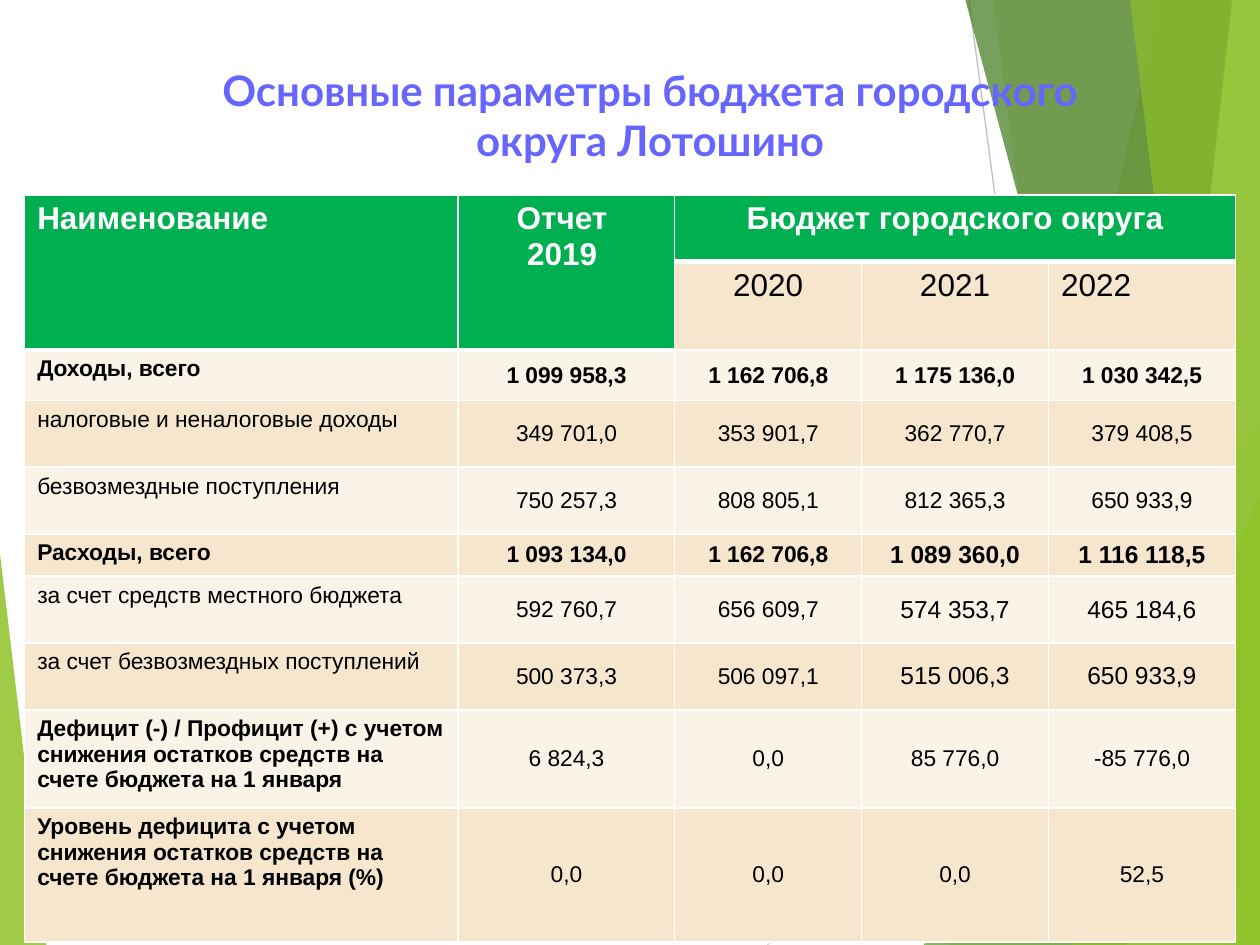
from dataclasses import dataclass

from lxml import etree
from pptx import Presentation
from pptx.dml.color import RGBColor
from pptx.enum.shapes import MSO_CONNECTOR, MSO_SHAPE
from pptx.enum.text import MSO_ANCHOR, PP_ALIGN
from pptx.oxml.ns import qn
from pptx.util import Pt

LEFT, CENTER = PP_ALIGN.LEFT, PP_ALIGN.CENTER
TOP, MIDDLE = MSO_ANCHOR.TOP, MSO_ANCHOR.MIDDLE
TRIANGLE, STRAIGHT = MSO_SHAPE.ISOSCELES_TRIANGLE, MSO_CONNECTOR.STRAIGHT

WHITE = RGBColor(0xFF, 0xFF, 0xFF)
BLACK = RGBColor(0x00, 0x00, 0x00)
GREY = RGBColor(0xBF, 0xBF, 0xBF)
PALE_GREY = RGBColor(0xD9, 0xD9, 0xD9)
LEAF = RGBColor(0x90, 0xC2, 0x26)
GRASS = RGBColor(0x54, 0xA0, 0x21)
FOREST = RGBColor(0x3F, 0x78, 0x19)
LIME = RGBColor(0xC0, 0xE4, 0x74)
VIOLET = RGBColor(0x66, 0x66, 0xFF)
HEADER_GREEN = RGBColor(0x00, 0xB0, 0x50)
SAND = RGBColor(0xF5, 0xE6, 0xCD)
CREAM = RGBColor(0xFA, 0xF3, 0xE8)

SLIDE_W, SLIDE_H = 720, 540


@dataclass(frozen=True)
class Ray:
    x1: float
    y1: float
    x2: float
    y2: float
    color: RGBColor


@dataclass(frozen=True)
class Band:
    """Full-height strip reaching the right edge, with a slanted left side."""
    top_x: float
    bottom_x: float
    color: RGBColor
    opacity: int


@dataclass(frozen=True)
class Wedge:
    """Triangle standing on the slide's bottom edge."""
    left: float
    top: float
    width: float
    apex: float
    color: RGBColor
    opacity: int


@dataclass(frozen=True)
class BudgetRow:
    name: str
    values: tuple[str, ...]
    height: float
    bold_name: bool = False
    bold_values: bool = False
    late_size: float = 13  # text size of the last two years


DECORATION = (
    Ray(553.7, 0, 625.7, 540, GREY),
    Ray(720, 290.2, 438.5, 540, PALE_GREY),
    Band(663.1, 542.2, LEAF, 30),
    Band(567.4, 638.6, LEAF, 20),
    Wedge(527.8, 239.8, 192.2, 1, GRASS, 72),
    Band(551.5, 697, FOREST, 70),
    Band(704.2, 643.7, LIME, 70),
    Band(645.8, 711.4, LEAF, 65),
    Wedge(612.7, 283, 107.3, 1, LEAF, 80),
    Wedge(0, 316.1, 26.6, 0, LEAF, 85),
)

COLUMN_WIDTHS = (247.7, 123.8, 106.8, 106.8, 106.8)
HEADER_HEIGHTS = (38.2, 47.8)
YEARS = (("2020", CENTER), ("2021", CENTER), ("2022", LEFT))
BUDGET = (
    BudgetRow("Доходы, всего", ("1 099 958,3", "1 162 706,8", "1 175 136,0", "1 030 342,5"),
              28.8, True, True),
    BudgetRow("налоговые и неналоговые доходы",
              ("349 701,0", "353 901,7", "362 770,7", "379 408,5"), 38.2),
    BudgetRow("безвозмездные поступления",
              ("750 257,3", "808 805,1", "812 365,3", "650 933,9"), 38.2),
    BudgetRow("Расходы, всего", ("1 093 134,0", "1 162 706,8", "1 089 360,0", "1 116 118,5"),
              24, True, True, 14),
    BudgetRow("за счет средств местного бюджета",
              ("592 760,7", "656 609,7", "574 353,7", "465 184,6"), 38.2, late_size=14),
    BudgetRow("за счет безвозмездных поступлений",
              ("500 373,3", "506 097,1", "515 006,3", "650 933,9"), 38.2, late_size=14),
    BudgetRow("Дефицит (-) / Профицит (+) с учетом снижения остатков средств на счете "
              "бюджета на 1 января", ("6 824,3", "0,0", "85 776,0", "-85 776,0"), 56.2, True),
    BudgetRow("Уровень дефицита с учетом снижения остатков средств на счете "
              "бюджета на 1 января (%)", ("0,0", "0,0", "0,0", "52,5"), 76.6, True),
)


def paint(shape, color: RGBColor, opacity: int) -> None:
    shape.shadow.inherit = False
    shape.line.fill.background()
    shape.fill.solid()
    shape.fill.fore_color.rgb = color
    tone = shape.fill._xPr.find(qn("a:solidFill"))[0]
    etree.SubElement(tone, qn("a:alpha"), val=str(opacity * 1000))


def draw_ray(slide, ray: Ray) -> None:
    line = slide.shapes.add_connector(STRAIGHT, Pt(ray.x1), Pt(ray.y1), Pt(ray.x2), Pt(ray.y2))
    line.line.color.rgb = ray.color
    line.line.width = Pt(0.75)
    etree.SubElement(line._element.spPr, qn("a:effectLst"))


def draw_band(slide, band: Band) -> None:
    outline = slide.shapes.build_freeform(Pt(band.top_x), Pt(-0.6))
    corners = ((SLIDE_W, -0.6), (SLIDE_W, SLIDE_H), (band.bottom_x, SLIDE_H))
    outline.add_line_segments([(Pt(x), Pt(y)) for x, y in corners], close=True)
    paint(outline.convert_to_shape(), band.color, band.opacity)


def draw_wedge(slide, wedge: Wedge) -> None:
    triangle = slide.shapes.add_shape(TRIANGLE, Pt(wedge.left), Pt(wedge.top),
                                      Pt(wedge.width), Pt(SLIDE_H - wedge.top))
    triangle.adjustments[0] = wedge.apex
    paint(triangle, wedge.color, wedge.opacity)


def write(frame, lines: tuple[str, ...], size: float, color: RGBColor, bold: bool,
          align=CENTER, font: str = "Arial") -> None:
    for number, line in enumerate(lines):
        paragraph = frame.add_paragraph() if number else frame.paragraphs[0]
        paragraph.alignment = align
        run = paragraph.add_run()
        run.text = line
        run.font.name, run.font.size, run.font.bold = font, Pt(size), bold
        run.font.color.rgb = color


def style_cell(cell, fill: RGBColor, top: float, bottom: float) -> None:
    """Give the cell white borders and a plain fill."""
    properties = cell._tc.get_or_add_tcPr()
    for side, width in (("L", 1), ("R", 1), ("T", top), ("B", bottom)):
        border = etree.SubElement(properties, qn(f"a:ln{side}"), w=str(Pt(width)))
        solid = etree.SubElement(border, qn("a:solidFill"))
        etree.SubElement(solid, qn("a:srgbClr"), val=str(WHITE))
    cell.fill.solid()
    cell.fill.fore_color.rgb = fill


def draw_title(slide) -> None:
    title = slide.shapes.add_textbox(Pt(93.6), Pt(31.7), Pt(555.8), Pt(67.7)).text_frame
    title.word_wrap = True
    title.vertical_anchor = MIDDLE
    write(title, ("Основные параметры бюджета городского округа Лотошино",),
          24, VIOLET, True, font="Lato")


def draw_budget(slide) -> None:
    heights = HEADER_HEIGHTS + tuple(row.height for row in BUDGET)
    table = slide.shapes.add_table(len(heights), len(COLUMN_WIDTHS), Pt(14.1), Pt(111.4),
                                   Pt(sum(COLUMN_WIDTHS)), Pt(sum(heights))).table
    table.first_row = table.horz_banding = False
    for column, width in zip(table.columns, COLUMN_WIDTHS):
        column.width = Pt(width)
    for r, height in enumerate(heights):
        table.rows[r].height = Pt(height)
        for c in range(len(COLUMN_WIDTHS)):
            header_end = 1 if c < 2 else 0
            fill = HEADER_GREEN if r <= header_end else (SAND if r % 2 else CREAM)
            style_cell(table.cell(r, c), fill, 3 if r == header_end + 1 else 1,
                       3 if r == header_end else 1)

    for c in (0, 1):
        table.cell(0, c).merge(table.cell(1, c))
    table.cell(0, 2).merge(table.cell(0, 4))
    headings = ((("Наименование",), LEFT), (("Отчет ", "2019 "), CENTER),
                (("Бюджет городского округа",), CENTER))
    for c, (lines, align) in enumerate(headings):
        write(table.cell(0, c).text_frame, lines, 18, WHITE, True, align)
    for c, (year, align) in enumerate(YEARS, start=2):
        write(table.cell(1, c).text_frame, (year,), 18, BLACK, False, align)

    for r, row in enumerate(BUDGET, start=len(HEADER_HEIGHTS)):
        write(table.cell(r, 0).text_frame, (row.name,), 13, BLACK, row.bold_name, LEFT)
        for c, value in enumerate(row.values, start=1):
            cell = table.cell(r, c)
            cell.vertical_anchor = MIDDLE
            write(cell.text_frame, (value,), row.late_size if c > 2 else 13,
                  BLACK, row.bold_values)


def main() -> None:
    deck = Presentation()
    deck.slide_width, deck.slide_height = Pt(SLIDE_W), Pt(SLIDE_H)
    slide = deck.slides.add_slide(deck.slide_layouts[6])
    painters = {Ray: draw_ray, Band: draw_band, Wedge: draw_wedge}
    for piece in DECORATION:
        painters[type(piece)](slide, piece)
    draw_title(slide)
    draw_budget(slide)
    deck.save("out.pptx")


if __name__ == "__main__":
    main()
